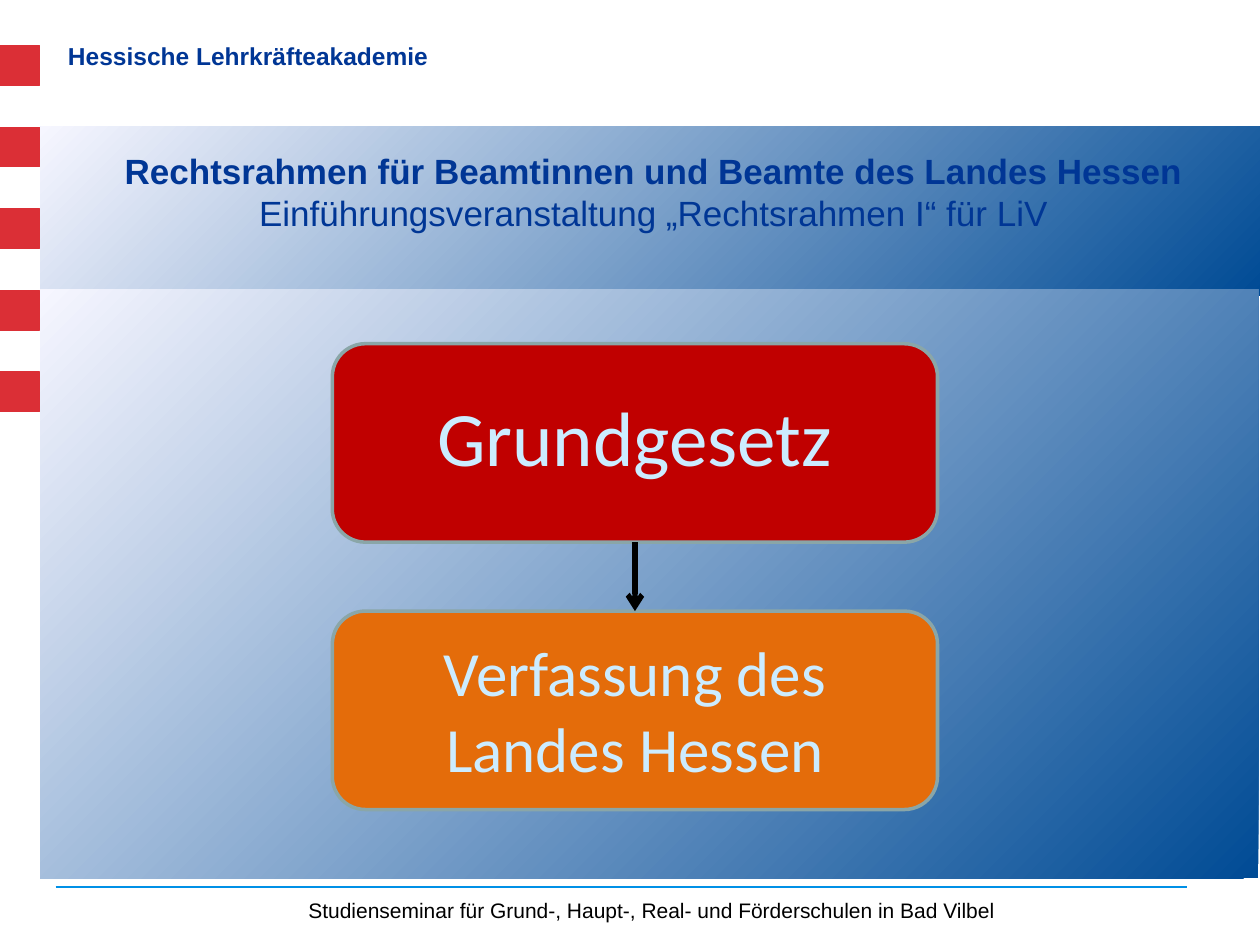
from lxml.etree import SubElement
from pptx import Presentation
from pptx.dml.color import RGBColor
from pptx.enum.shapes import MSO_CONNECTOR, MSO_SHAPE
from pptx.enum.text import MSO_ANCHOR, MSO_AUTO_SIZE, PP_ALIGN
from pptx.oxml.ns import qn
from pptx.util import Cm, Pt

COLORS = {
    "navy": "003695", "band_dark": "004B95", "band_light": "F6F6FF",
    "flag": "DB2F36", "rule": "0090E6", "black": "000000",
    "card_red": "C00000", "card_orange": "E46C0A",
    "card_line": "8AA6A8", "card_text": "CCECFF",
}


def color(name):
    return RGBColor.from_string(COLORS[name])


def write_text(box, *lines, size, tint, font="Arial", bold=(), align=PP_ALIGN.CENTER,
               anchor=MSO_ANCHOR.TOP, side=0.25, spacing=None):
    """Fill one paragraph with lines; bold holds the numbers of the bold lines."""
    frame = box.text_frame
    frame.word_wrap = True
    frame.auto_size = MSO_AUTO_SIZE.NONE
    frame.vertical_anchor = anchor
    frame.margin_left = frame.margin_right = Cm(side)
    frame.margin_top = frame.margin_bottom = Cm(0.13)
    para = frame.paragraphs[0]
    para.alignment = align
    para.line_spacing = spacing
    for number, line in enumerate(lines):
        if number:
            para.add_line_break()
        span = para.add_run()
        span.text = line
        span.font.name = font
        span.font.size = Pt(size)
        span.font.bold = number in bold
        span.font.color.rgb = color(tint)


deck = Presentation()
deck.slide_width, deck.slide_height = Cm(25.4), Cm(19.05)
page = deck.slides.add_slide(deck.slide_layouts[5])
shapes = page.shapes

# Gradient bands behind title and body
for top, width, height in [(2.56, 24.59, 3.4), (5.84, 24.56, 11.87)]:
    band = shapes.add_shape(MSO_SHAPE.RECTANGLE, Cm(0.81), Cm(top), Cm(width), Cm(height))
    band.shadow.inherit = False
    band.line.fill.background()
    band.fill.gradient()
    band.fill.gradient_angle = 135
    for stop, name in zip(band.fill.gradient_stops, ["band_dark", "band_light"]):
        stop.color.rgb = color(name)

# Red squares down the left edge
for row in range(5):
    square = shapes.add_shape(MSO_SHAPE.RECTANGLE, 0, Cm(0.92 + 1.645 * row), Cm(0.8), Cm(0.8))
    square.shadow.inherit = False
    square.fill.solid()
    square.fill.fore_color.rgb = color("flag")
    square.line.color.rgb = color("flag")
    square.line.width = Pt(0.75)

# Header
header = shapes.add_textbox(Cm(1.37), Cm(0.76), Cm(20.4), Cm(0.79))
write_text(header, "Hessische Lehrkräfteakademie", size=14, tint="navy", bold=(0,),
           align=PP_ALIGN.LEFT, side=0, spacing=0.9)

# Title, brought in front of the bands
title = shapes.title
title.left, title.top, title.width, title.height = Cm(1.47), Cm(2.49), Cm(23.42), Cm(2.74)
write_text(title, "Rechtsrahmen für Beamtinnen und Beamte des Landes Hessen",
           "Einführungsveranstaltung „Rechtsrahmen I“ für LiV",
           size=20, tint="navy", bold=(0,), anchor=MSO_ANCHOR.MIDDLE, side=0.13)
shapes._spTree.append(title._element)

# Footer
footer = shapes.add_textbox(Cm(3.71), Cm(17.93), Cm(16.61), Cm(0.81))
write_text(footer, "Studienseminar für Grund-, Haupt-, Real- und Förderschulen in Bad Vilbel",
           size=12, tint="black", align=PP_ALIGN.RIGHT, anchor=MSO_ANCHOR.BOTTOM)

# Cards of the legal hierarchy
cards = [
    (6.93, "card_red", 7.72, 2.13, 44, ["Grundgesetz"]),
    (12.32, "card_orange", 12.65, 3.33, 36, ["Verfassung des", "Landes Hessen"]),
]
for top, fill, text_top, text_height, size, lines in cards:
    card = shapes.add_shape(MSO_SHAPE.ROUNDED_RECTANGLE, Cm(6.7), Cm(top), Cm(12.2), Cm(4))
    card.shadow.inherit = False
    card.fill.solid()
    card.fill.fore_color.rgb = color(fill)
    card.line.color.rgb = color("card_line")
    card.line.width = Pt(2)
    label = shapes.add_textbox(Cm(6.7), Cm(text_top), Cm(12.2), Cm(text_height))
    write_text(label, *lines, size=size, tint="card_text", font="Calibri")

# Footer rule and arrow between the cards
for start_x, start_y, end_x, end_y, name, width, arrow in [
    (1.12, 17.88, 23.93, 17.88, "rule", 0.75, False),
    (12.8, 10.93, 12.8, 12.32, "black", 3, True),
]:
    line = shapes.add_connector(MSO_CONNECTOR.STRAIGHT, Cm(start_x), Cm(start_y),
                                Cm(end_x), Cm(end_y))
    line.line.color.rgb = color(name)
    line.line.width = Pt(width)
    if arrow:
        SubElement(line.line._get_or_add_ln(), qn("a:tailEnd"), type="arrow")
    SubElement(line._element.spPr, qn("a:effectLst"))

deck.save("out.pptx")
